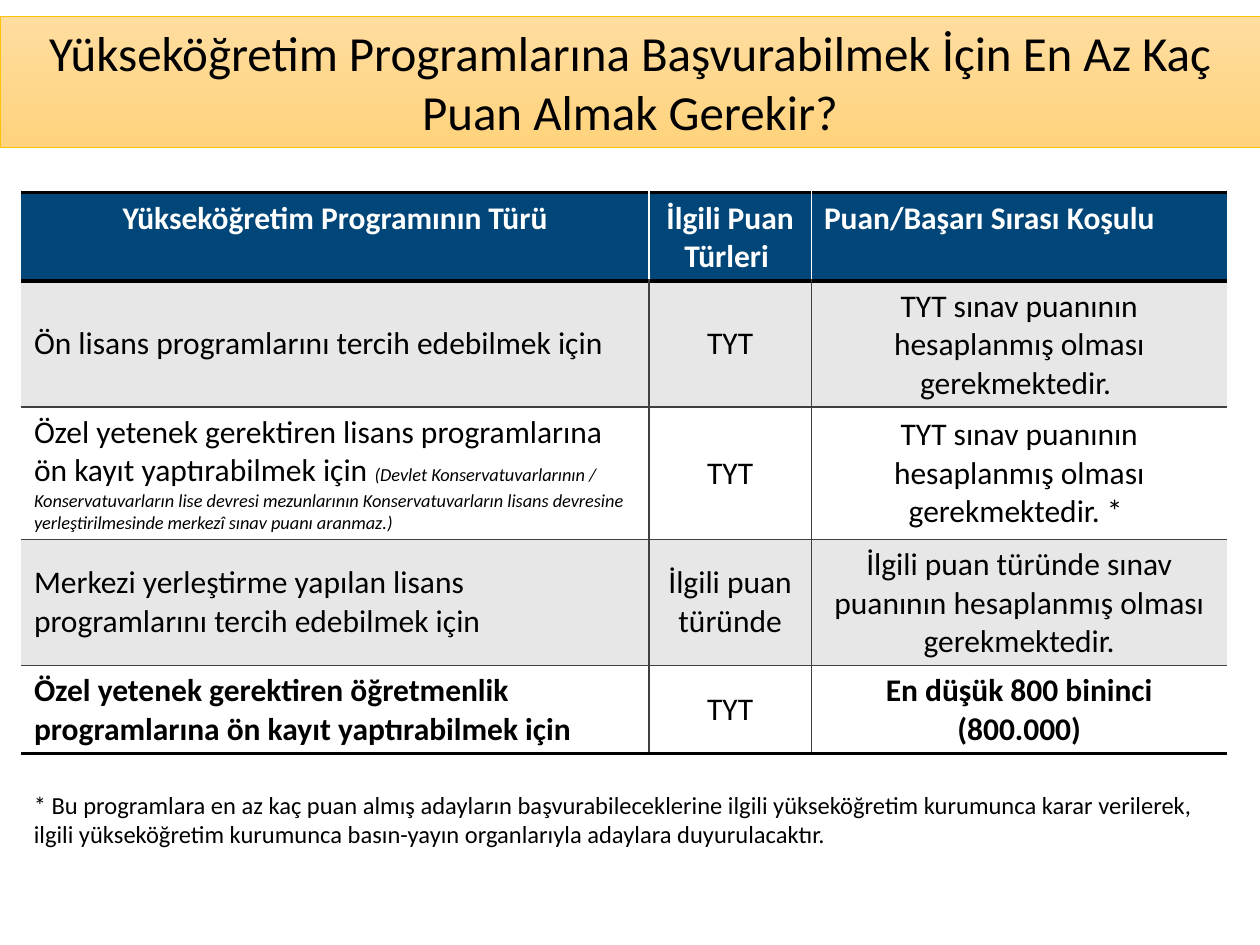
from dataclasses import dataclass

from lxml import etree
from pptx import Presentation
from pptx.dml.color import RGBColor
from pptx.enum.text import MSO_ANCHOR, MSO_AUTO_SIZE, PP_ALIGN
from pptx.oxml.ns import qn
from pptx.util import Inches, Pt

LEFT, CENTER = PP_ALIGN.LEFT, PP_ALIGN.CENTER
TOP, MIDDLE = MSO_ANCHOR.TOP, MSO_ANCHOR.MIDDLE
GROW = MSO_AUTO_SIZE.SHAPE_TO_FIT_TEXT

WIDE, HIGH = Inches(10), Inches(7.5)
FONT = "Calibri"
HEX = {
    "ink": "000000", "white": "FFFFFF", "head": "004678", "band": "E7E7E7",
    "rule": "404040", "light": "FFDD9F", "warm": "FFD37D", "gold": "FFC30B",
}
COLS = (4.98, 1.29, 3.30)
ROWS = (0.70, 1.00, 1.05, 1.00, 0.70)


@dataclass
class Box:
    left: float
    top: float
    width: float
    height: float

    def place(self) -> tuple[int, int, int, int]:
        return (int(self.left * WIDE), int(self.top * HIGH),
                int(self.width * WIDE), int(self.height * HIGH))


@dataclass
class Row:
    kind: str
    score: str
    rule: str
    note: str = ""
    bold: bool = False


BANNER = Box(0, 0.017, 1, 0.139)
GRID = Box(0.017, 0.204, 0.957, 0.593)
FOOT = Box(0.017, 0.829, 0.957, 0.117)

TITLE = "Yükseköğretim Programlarına Başvurabilmek İçin En Az Kaç Puan Almak Gerekir?"
NEED = "TYT sınav puanının hesaplanmış olması gerekmektedir. "
DATA = (
    Row("Yükseköğretim Programının Türü", "İlgili Puan Türleri ",
        "Puan/Başarı Sırası Koşulu", bold=True),
    Row("Ön lisans programlarını tercih edebilmek için", "TYT", NEED),
    Row("Özel yetenek gerektiren lisans programlarına ön kayıt yaptırabilmek için ",
        "TYT", NEED + "* ",
        "(Devlet Konservatuvarlarının / Konservatuvarların lise devresi "
        "mezunlarının Konservatuvarların lisans devresine yerleştirilmesinde "
        "merkezî sınav puanı aranmaz.)"),
    Row("Merkezi yerleştirme yapılan lisans programlarını tercih edebilmek için",
        "İlgili puan türünde",
        "İlgili puan türünde sınav puanının hesaplanmış olması gerekmektedir."),
    Row("Özel yetenek gerektiren öğretmenlik programlarına ön kayıt yaptırabilmek için",
        "TYT", "En düşük 800 bininci (800.000)", bold=True),
)
NOTE = ("* Bu programlara en az kaç puan almış adayların başvurabileceklerine ilgili "
        "yükseköğretim kurumunca karar verilerek, ilgili yükseköğretim kurumunca "
        "basın-yayın organlarıyla adaylara duyurulacaktır.")


def tint(name: str) -> RGBColor:
    return RGBColor.from_string(HEX[name])


def write(frame, text: str, size: float, align, color: str = "ink",
          bold: bool = False):
    frame.word_wrap = True
    para = frame.paragraphs[0]
    para.alignment = align
    para.add_run().text = text
    font = para.font
    font.name, font.size, font.bold = FONT, Pt(size), bold
    font.color.rgb = tint(color)
    return para


def edge(cell, side: str, color: str, width: float, slot: int) -> None:
    line = etree.Element(qn(f"a:ln{side}"), w=str(int(Pt(width))))
    if color:
        fill = etree.SubElement(line, qn("a:solidFill"))
        etree.SubElement(fill, qn("a:srgbClr"), val=HEX[color])
    else:
        etree.SubElement(line, qn("a:noFill"))
    cell._tc.get_or_add_tcPr().insert(slot, line)


def frame_cell(cell, row: int, col: int) -> None:
    inner = "white" if row == 0 else "rule"
    thick, thin = ("ink", 2), ("rule", 1)
    sides = {
        "L": (inner if col > 0 else "", 1),
        "R": (inner if col < len(COLS) - 1 else "", 1),
        "T": thick if row <= 1 else thin,
        "B": thick if row in (0, len(DATA) - 1) else thin,
    }
    for slot, (side, (color, width)) in enumerate(sides.items()):
        edge(cell, side, color, width, slot)


def draw_cell(cell, item: Row, row: int, col: int) -> None:
    head = row == 0
    cell.fill.solid()
    cell.fill.fore_color.rgb = tint(
        "head" if head else "band" if row % 2 else "white")
    cell.vertical_anchor = TOP if head else MIDDLE
    left = col == (2 if head else 0)
    para = write(cell.text_frame, (item.kind, item.score, item.rule)[col], 18,
                 LEFT if left else CENTER, "white" if head else "ink",
                 item.bold and (head or col != 1))
    if col == 0 and item.note:
        run = para.add_run()
        run.text = item.note
        run.font.size, run.font.italic = Pt(10.5), True
    frame_cell(cell, row, col)


def draw_title(slide) -> None:
    title = slide.shapes.title
    title.left, title.top, title.width, title.height = BANNER.place()
    title.fill.gradient()
    title.fill.gradient_angle = 270
    for stop, name in zip(title.fill.gradient_stops, ("light", "warm")):
        stop.color.rgb = tint(name)
    title.line.color.rgb = tint("gold")
    title.line.width = Pt(0.5)
    title.text_frame.auto_size = GROW
    write(title.text_frame, TITLE, 28, CENTER)


def draw_table(slide) -> None:
    table = slide.shapes.add_table(len(ROWS), len(COLS), *GRID.place()).table
    for column, width in zip(table.columns, COLS):
        column.width = Inches(width)
    for line, height in zip(table.rows, ROWS):
        line.height = Inches(height)
    for row, item in enumerate(DATA):
        for col in range(len(COLS)):
            draw_cell(table.cell(row, col), item, row, col)


def draw_foot(slide) -> None:
    frame = slide.shapes.add_textbox(*FOOT.place()).text_frame
    frame.auto_size = GROW
    write(frame, NOTE, 14, LEFT)


def main() -> None:
    deck = Presentation()
    deck.slide_width, deck.slide_height = WIDE, HIGH
    slide = deck.slides.add_slide(deck.slide_layouts.get_by_name("Title Only"))
    draw_title(slide)
    draw_table(slide)
    draw_foot(slide)
    deck.save("out.pptx")


if __name__ == "__main__":
    main()
